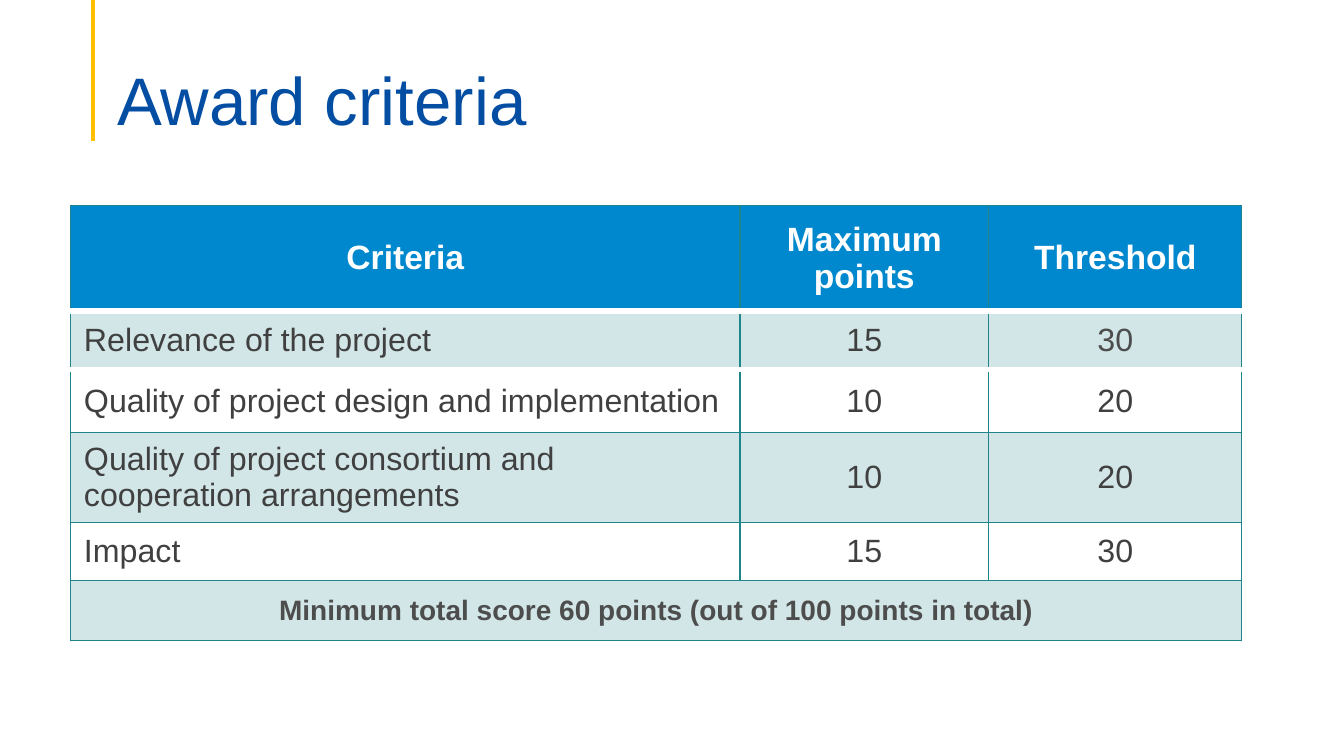
from lxml.etree import SubElement
from pptx import Presentation
from pptx.dml.color import RGBColor
from pptx.enum.shapes import MSO_CONNECTOR
from pptx.enum.text import MSO_ANCHOR, MSO_AUTO_SIZE, PP_ALIGN
from pptx.oxml.ns import qn
from pptx.oxml.xmlchemy import OxmlElement
from pptx.util import Pt

# Content
TITLE = "Award criteria"
ROWS = [
    ("Criteria", "Maximum points", "Threshold"),
    ("Relevance of the project", "15", "30"),
    ("Quality of project design and implementation", "10", "20"),
    ("Quality of project consortium and cooperation arrangements", "10", "20"),
    ("Impact", "15", "30"),
    ("Minimum total score 60 points (out of 100 points in total)", "", ""),
]
HEX = {"title": "034EA2", "rule": "FFC000", "head": "0088CE", "teal": "1E858B",
       "white": "FFFFFF", "text": "404040", "soft": "4D4D4D"}
FONT = "Arial"
WIDTHS = [478.2, 177.7, 180.8]
HEIGHTS = [75, 42, 45, 64, 42, 42.4]
LAST = len(ROWS) - 1


def add_run(para, text, size, color, bold=False):
    run = para.add_run()
    run.text = text
    run.font.name, run.font.size, run.font.bold = FONT, Pt(size), bold
    run.font.color.rgb = RGBColor.from_string(HEX[color])


def set_edges(cell, top, base):
    """Draw the four cell borders; top and base are (color, width)."""
    side = ("teal", 1)
    edges = {"a:lnL": side, "a:lnR": side, "a:lnT": top, "a:lnB": base}
    props = cell._tc.get_or_add_tcPr()
    for i, (tag, (color, width)) in enumerate(edges.items()):
        edge = OxmlElement(tag)
        edge.set("w", str(Pt(width)))
        fill = SubElement(edge, qn("a:solidFill"))
        SubElement(fill, qn("a:srgbClr"), val=HEX[color])
        props.insert(i, edge)


def set_fill(cell, row):
    if row and row % 2 == 0:
        cell.fill.background()
        return
    cell.fill.solid()
    cell.fill.fore_color.rgb = RGBColor.from_string(HEX["teal" if row else "head"])
    if row:
        tint = cell._tc.tcPr.find(".//" + qn("a:srgbClr"))
        SubElement(tint, qn("a:alpha"), val="20000")


def edge_at(line):
    """White bands lie above and below the first body row."""
    return ("white", 4.5) if line in (1, 2) else ("teal", 1)


def text_style(row, col):
    if row == 0:
        return 24, "white", True
    if row == LAST:
        return 20, "soft", True
    return 23, "soft" if (row, col) == (1, 2) else "text", False


deck = Presentation()
deck.slide_width, deck.slide_height = Pt(960), Pt(540)
slide = deck.slides.add_slide(deck.slide_layouts[5])

# Accent rule
rule = slide.shapes.add_connector(MSO_CONNECTOR.STRAIGHT, Pt(66.5), 0, Pt(66.5), Pt(100.8))
rule.line.color.rgb = RGBColor.from_string(HEX["rule"])
rule.line.width = Pt(2.25)
SubElement(rule._element.spPr, qn("a:effectLst"))

# Title
title = slide.shapes.title
title.left, title.top, title.width, title.height = Pt(76.5), Pt(38), Pt(828), Pt(62)
frame = title.text_frame
frame.auto_size = MSO_AUTO_SIZE.NONE
frame.word_wrap = True
frame.vertical_anchor = MSO_ANCHOR.BOTTOM
frame.margin_left = frame.margin_right = Pt(7.2)
frame.margin_top, frame.margin_bottom = Pt(3.6), 0
para = frame.paragraphs[0]
para.alignment = PP_ALIGN.LEFT
para.line_spacing = 0.9
add_run(para, TITLE, 48, "title")

# Criteria table
table = slide.shapes.add_table(len(ROWS), len(WIDTHS), Pt(50.4), Pt(147),
                               Pt(sum(WIDTHS)), Pt(sum(HEIGHTS))).table
table.first_row = table.horz_banding = False
for col, width in zip(table.columns, WIDTHS):
    col.width = Pt(width)
for line, height in zip(table.rows, HEIGHTS):
    line.height = Pt(height)
table.cell(LAST, 0).merge(table.cell(LAST, 2))

for r, texts in enumerate(ROWS):
    for c, text in enumerate(texts):
        cell = table.cell(r, c)
        cell.vertical_anchor = MSO_ANCHOR.MIDDLE
        cell.margin_left = cell.margin_right = Pt(9.6)
        cell.margin_top = cell.margin_bottom = Pt(4.8)
        set_fill(cell, r)
        set_edges(cell, edge_at(r), edge_at(r + 1))
        if text:
            para = cell.text_frame.paragraphs[0]
            left = c == 0 and 0 < r < LAST
            para.alignment = PP_ALIGN.LEFT if left else PP_ALIGN.CENTER
            add_run(para, text, *text_style(r, c))

deck.save("out.pptx")
